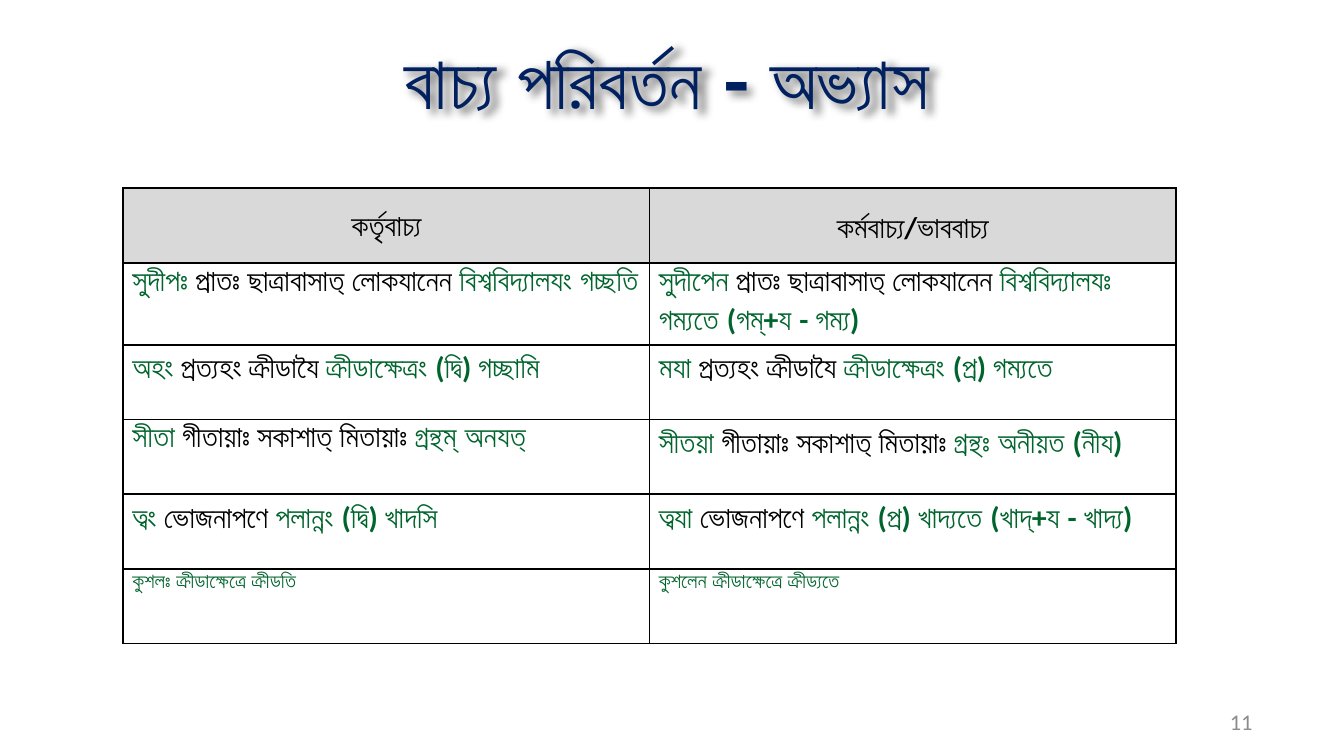
from dataclasses import dataclass

from lxml import etree
from pptx import Presentation
from pptx import util as u
from pptx.dml.color import RGBColor
from pptx.enum import text
from pptx.oxml import ns, parse_xml


@dataclass(frozen=True)
class Theme:
    title_color: str = "002060"
    key_color: str = "00642D"
    body_color: str = "000000"
    number_color: str = "8C8C8C"
    header_fill: str = "D9D9D9"
    title_font: str = "Roboto"
    body_font: str = "Calibri"
    title_size: int = 40
    body_size: int = 16
    small_size: int = 11
    number_size: int = 12


HEADINGS = ("কর্তৃবাচ্য", "কর্মবাচ্য/ভাববাচ্য")
# Each sentence is split into subject, unchanged middle and changed ending.
SENTENCES = [
    (("সুদীপঃ", " প্রাতঃ ছাত্রাবাসাত্ লোকযানেন ", "বিশ্ববিদ্যালযং গচ্ছতি"),
     ("সুদীপেন", " প্রাতঃ ছাত্রাবাসাত্ লোকযানেন ",
      "বিশ্ববিদ্যালযঃ গম্যতে (গম্+য - গম্য)")),
    (("অহং", " প্রত্যহং ক্রীডাযৈ ", "ক্রীডাক্ষেত্রং (দ্বি) গচ্ছামি"),
     ("মযা", " প্রত্যহং ক্রীডাযৈ ", "ক্রীডাক্ষেত্রং (প্র) গম্যতে")),
    (("সীতা", " গীতায়াঃ সকাশাত্ মিতায়াঃ ", "গ্রন্থম্ অনযত্"),
     ("সীতয়া", " গীতায়াঃ সকাশাত্ মিতায়াঃ ", "গ্রন্থঃ অনীয়ত (নীয)")),
    (("ত্বং", " ভোজনাপণে ", "পলান্নং (দ্বি) খাদসি"),
     ("ত্বযা", " ভোজনাপণে ", "পলান্নং (প্র) খাদ্যতে (খাদ্+য - খাদ্য)")),
]
SHORT_SENTENCES = (("কুশলঃ ", "ক্রীডাক্ষেত্রে", " ক্রীডতি"),
                   ("কুশলেন ক্রীডাক্ষেত্রে ক্রীড্যতে",))
ROW_HEIGHTS = (40, 44, 40, 40, 40, 40)


class SlideBuilder:
    def __init__(self, slide, theme):
        self.slide = slide
        self.theme = theme

    def style(self, font, size, color, bold=False, name=None):
        font.name = name or self.theme.body_font
        font.size = u.Pt(size)
        font.bold = bold
        font.color.rgb = RGBColor.from_string(color)

    def title(self, words, left, top, width, height):
        box = self.slide.shapes.title
        box.left, box.top = u.Pt(left), u.Pt(top)
        box.width, box.height = u.Pt(width), u.Pt(height)
        box.text_frame.vertical_anchor = text.MSO_ANCHOR.MIDDLE
        para = box.text_frame.paragraphs[0]
        para.text = words
        para.alignment = text.PP_ALIGN.CENTER
        self.style(para.font, self.theme.title_size, self.theme.title_color,
                   True, self.theme.title_font)
        self.soft_shadow(box)

    def soft_shadow(self, box):
        """Give an unfilled box a blurred shadow, which falls from its text."""
        box._element.spPr.append(parse_xml(
            f'<a:effectLst {ns.nsdecls("a")}>'
            f'<a:outerShdw blurRad="{u.Pt(4)}" dist="{u.Pt(3)}" dir="2700000" '
            'algn="tl" rotWithShape="0"><a:srgbClr val="000000">'
            '<a:alpha val="40000"/></a:srgbClr></a:outerShdw></a:effectLst>'))

    def table(self, left, top, column_width, row_heights, columns=2):
        frame = self.slide.shapes.add_table(
            len(row_heights), columns, u.Pt(left), u.Pt(top),
            u.Pt(column_width * columns), u.Pt(sum(row_heights)))
        grid = frame.table
        grid.first_row = grid.horz_banding = False
        for column in grid.columns:
            column.width = u.Pt(column_width)
        for row, height in zip(grid.rows, row_heights):
            row.height = u.Pt(height)
        return grid

    def cell(self, cell, spans, size, align=None, fill=None):
        """Fill a cell with (words, colour, bold) spans."""
        cell.margin_left = cell.margin_right = u.Pt(5)
        cell.margin_top = cell.margin_bottom = 0
        self.borders(cell)
        if fill:
            cell.fill.solid()
            cell.fill.fore_color.rgb = RGBColor.from_string(fill)
            cell.vertical_anchor = text.MSO_ANCHOR.MIDDLE
        else:
            cell.fill.background()
        para = cell.text_frame.paragraphs[0]
        para.line_spacing = 1.15
        para.alignment = align
        for words, color, bold in spans:
            span = para.add_run()
            span.text = words
            self.style(span.font, size, color, bold)

    def borders(self, cell):
        properties = cell._tc.get_or_add_tcPr()
        for side in ("lnL", "lnR", "lnT", "lnB"):
            line = etree.SubElement(properties, ns.qn(f"a:{side}"), w=str(u.Pt(1)))
            fill = etree.SubElement(line, ns.qn("a:solidFill"))
            etree.SubElement(fill, ns.qn("a:srgbClr"), val=self.theme.body_color)

    def page_number(self, number, left, top, width, height):
        box = self.slide.shapes.add_textbox(
            u.Pt(left), u.Pt(top), u.Pt(width), u.Pt(height))
        box.text_frame.word_wrap = True
        box.text_frame.vertical_anchor = text.MSO_ANCHOR.MIDDLE
        para = box.text_frame.paragraphs[0]
        para.text = str(number)
        para.alignment = text.PP_ALIGN.RIGHT
        self.style(para.font, self.theme.number_size, self.theme.number_color)


def main():
    deck = Presentation()
    deck.slide_width, deck.slide_height = u.Pt(720), u.Pt(405)
    theme = Theme()
    page = SlideBuilder(deck.slides.add_slide(deck.slide_layouts[5]), theme)
    page.title("বাচ্য পরিবর্তন - অভ্যাস", 60, 15, 594, 55.5)

    grid = page.table(66, 100.8, 282, ROW_HEIGHTS)
    for column, heading in enumerate(HEADINGS):
        page.cell(grid.cell(0, column), [(heading, theme.body_color, True)],
                  theme.body_size, text.PP_ALIGN.CENTER, theme.header_fill)

    for row, pair in enumerate([*SENTENCES, SHORT_SENTENCES], start=1):
        short = pair is SHORT_SENTENCES
        size = theme.small_size if short else theme.body_size
        middle_color = theme.key_color if short else theme.body_color
        for column, parts in enumerate(pair):
            spans = [(words, middle_color if place == 1 else theme.key_color,
                      place != 1) for place, words in enumerate(parts)]
            page.cell(grid.cell(row, column), spans, size)

    page.page_number(11, 510, 375.75, 168, 21.5)
    deck.save("out.pptx")


if __name__ == "__main__":
    main()
